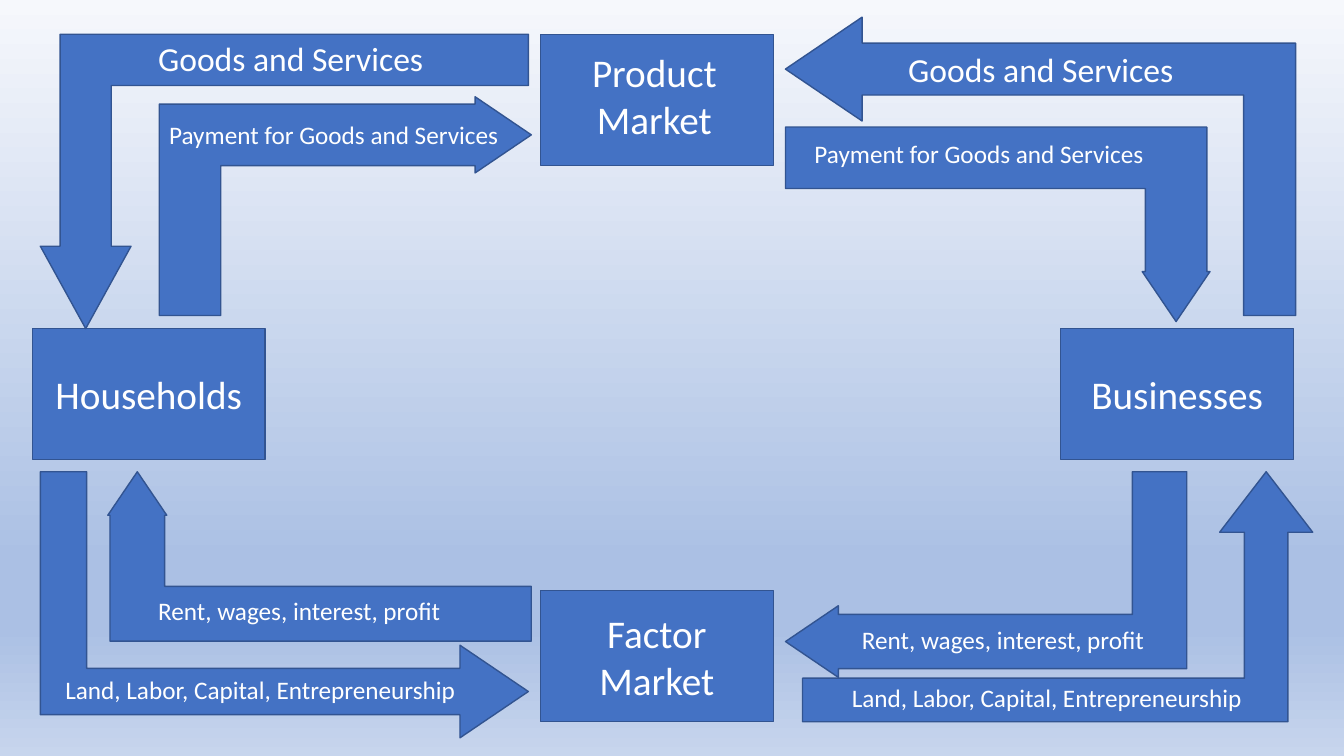
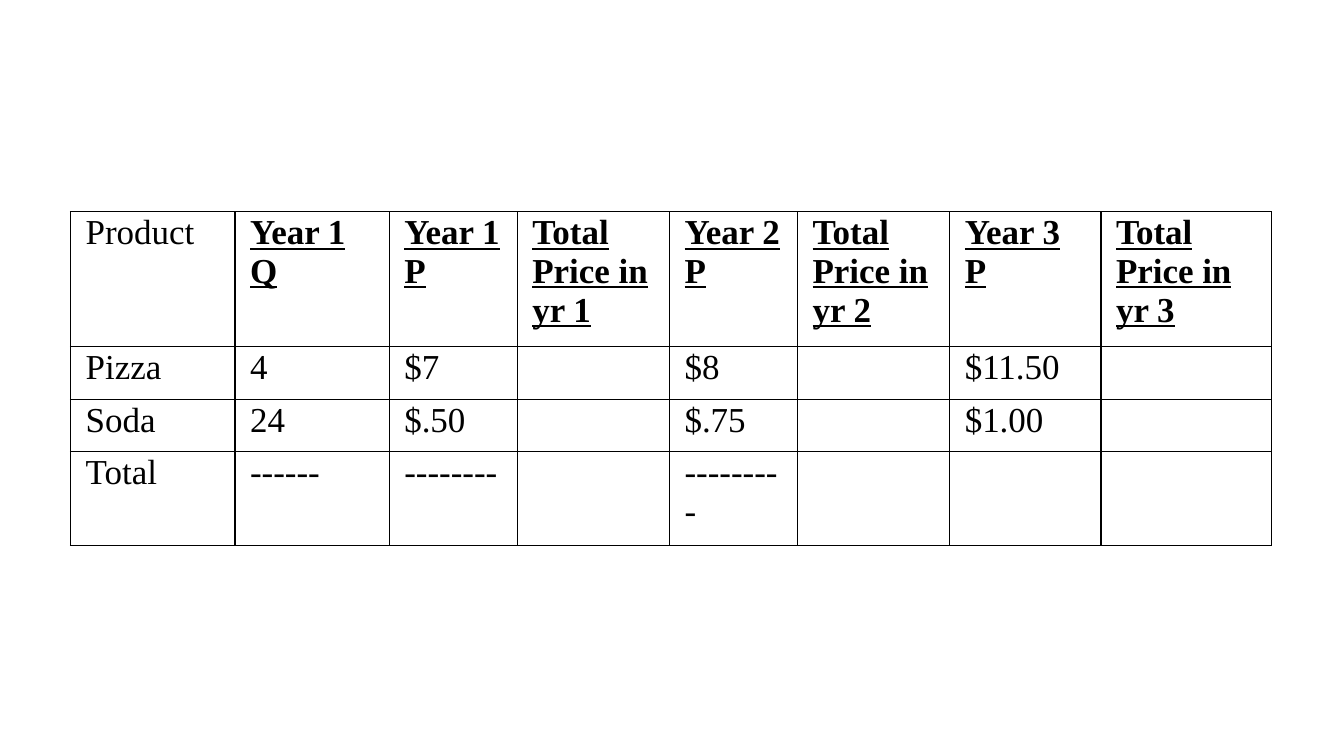
from dataclasses import dataclass
from typing import Any

from lxml.etree import SubElement
from pptx import Presentation
from pptx.dml.color import RGBColor
from pptx.enum.shapes import MSO_SHAPE as Shape
from pptx.enum.text import MSO_ANCHOR as Anchor, PP_ALIGN as Align
from pptx.oxml.ns import qn
from pptx.util import Inches, Pt

# Shared style
BLUE, OUTLINE, WHITE, BLACK = "4472C4", "325491", "FFFFFF", "000000"
BACKGROUND_STOPS = [(0, "F6F8FC"), (74, "ABC0E4"), (83, "ABC0E4"), (100, "C7D5ED")]
BOX_FONT = {"name": "Calibri", "size": Pt(28)}
TABLE_FONT = {"name": "Times New Roman", "size": Pt(25)}
HEADING_FONT = TABLE_FONT | {"bold": True, "underline": True}
CELL_FORMAT = {
    "margin_left": Inches(0.15), "margin_right": Inches(0.15),
    "margin_top": Inches(0.02), "margin_bottom": 0, "vertical_anchor": Anchor.TOP,
}
BOX_WIDTH, BOX_HEIGHT = 2.31, 1.3


@dataclass
class Box:
    left: float
    top: float
    text: str = ""


@dataclass
class FlowArrow:
    left: float
    top: float
    width: float
    height: float
    adjustments: tuple[float, float, float]
    rotation: int = 0
    flipped: bool = False


@dataclass
class Label:
    left: float
    top: float
    width: float
    height: float
    text: str
    size: int = 18
    centred: bool = False


BOXES = [
    Box(0.32, 3.26, "Households"),
    Box(10.52, 3.26, "Businesses"),
    Box(5.36, 0.34),
    Box(5.36, 5.86, "Factor Market"),
]
ARROWS = [
    # Outer loop
    FlowArrow(7.96, 4.68, 5.06, 2.48, (0.174, 0.186, 0.242)),
    FlowArrow(0.4, 0.34, 4.84, 2.92, (0.174, 0.154, 0.28), 180),
    FlowArrow(1.5, 3.58, 2.64, 4.84, (0.174, 0.174, 0.257), 90),
    FlowArrow(8.84, -0.88, 2.96, 5.06, (0.174, 0.174, 0.257), 270),
    # Inner loop
    FlowArrow(8.76, 3.71, 2.04, 3.98, (0.264, 0.174, 0.257), 270, True),
    FlowArrow(7.79, 1.26, 4.21, 1.93, (0.316, 0.174, 0.257), 180, True),
    FlowArrow(1.07, 4.68, 4.2, 1.68, (0.323, 0.174, 0.257), 0, True),
    FlowArrow(2.34, 0.2, 2.17, 3.69, (0.281, 0.174, 0.257), 90, True),
]
RESOURCES = "Land, Labor, Capital, Entrepreneurship"
INCOME = "Rent, wages, interest, profit"
PAYMENT = "Payment for Goods and Services"
GOODS = "Goods and Services"
LABELS = [
    Label(0.55, 6.64, 4.24, 0.4, RESOURCES),
    Label(8.35, 6.72, 4.24, 0.4, RESOURCES),
    Label(1.47, 5.86, 3.03, 0.4, INCOME),
    Label(8.45, 6.14, 3.03, 0.4, INCOME),
    Label(1.58, 1.13, 3.5, 0.4, PAYMENT),
    Label(7.98, 1.32, 3.5, 0.4, PAYMENT),
    Label(1.47, 0.33, 2.86, 0.5, GOODS, 24),
    Label(8.91, 0.44, 2.86, 0.5, GOODS, 24),
    Label(5.23, 0.43, 2.52, 1.04, "Product Market", 28, True),
]

COLUMN_WIDTHS = [1.63, 1.53, 1.27, 1.51, 1.27, 1.51, 1.5, 1.69]
ROW_HEIGHTS = [1.34, 0.52, 0.52, 0.93]
PRICE_ROWS = [
    ["Product", "Year 1 Q", "Year 1 P", "Total Price in yr 1", "Year 2 P",
     "Total Price in yr 2", "Year 3 P", "Total Price in yr 3"],
    ["Pizza", "4", "$7", "", "$8", "", "$11.50", ""],
    ["Soda", "24", "$.50", "", "$.75", "", "$1.00", ""],
    ["Total", "-" * 6, "-" * 8, "", "-" * 9, "", "", ""],
]


def color(value: str) -> RGBColor:
    return RGBColor.from_string(value)


def apply_format(target: Any, values: dict[str, Any]) -> None:
    for name, value in values.items():
        setattr(target, name, value)


def write_text(paragraph: Any, text: str, font: dict[str, Any], text_color: str) -> None:
    run = paragraph.add_run()
    run.text = text
    apply_format(run.font, font)
    run.font.color.rgb = color(text_color)


def set_gradient_background(slide: Any) -> None:
    fill = slide.background.fill
    fill.gradient()
    fill.gradient_angle = 270
    stop_list = next(slide.element.iter(qn("a:gsLst")))
    for stop in list(stop_list):
        stop_list.remove(stop)
    for position, value in BACKGROUND_STOPS:
        stop = SubElement(stop_list, qn("a:gs"), pos=str(position * 1000))
        SubElement(stop, qn("a:srgbClr"), val=value)


def add_blue_shape(slide: Any, kind: Shape, left: float, top: float,
                   width: float, height: float) -> Any:
    shape = slide.shapes.add_shape(
        kind, Inches(left), Inches(top), Inches(width), Inches(height))
    shape.shadow.inherit = False
    shape.fill.solid()
    shape.fill.fore_color.rgb = color(BLUE)
    shape.line.color.rgb = color(OUTLINE)
    shape.line.width = Pt(1)
    return shape


def add_box(slide: Any, box: Box) -> None:
    shape = add_blue_shape(slide, Shape.RECTANGLE, box.left, box.top, BOX_WIDTH, BOX_HEIGHT)
    if box.text:
        frame = shape.text_frame
        apply_format(frame, {"word_wrap": True, "vertical_anchor": Anchor.MIDDLE})
        frame.paragraphs[0].alignment = Align.CENTER
        write_text(frame.paragraphs[0], box.text, BOX_FONT, WHITE)


def add_arrow(slide: Any, arrow: FlowArrow) -> None:
    shape = add_blue_shape(
        slide, Shape.BENT_UP_ARROW, arrow.left, arrow.top, arrow.width, arrow.height)
    shape.rotation = arrow.rotation
    for index, value in enumerate(arrow.adjustments):
        shape.adjustments[index] = value
    if arrow.flipped:
        next(shape.element.iter(qn("a:xfrm"))).set("flipH", "1")


def add_label(slide: Any, label: Label) -> None:
    text_box = slide.shapes.add_textbox(
        Inches(label.left), Inches(label.top), Inches(label.width), Inches(label.height))
    frame = text_box.text_frame
    frame.word_wrap = label.centred
    paragraph = frame.paragraphs[0]
    paragraph.alignment = Align.CENTER if label.centred else Align.LEFT
    write_text(paragraph, label.text, BOX_FONT | {"size": Pt(label.size)}, WHITE)


def add_borders(cell: Any) -> None:
    properties = cell._tc.get_or_add_tcPr()
    for side in ("lnL", "lnR", "lnT", "lnB"):
        line = SubElement(properties, qn(f"a:{side}"), w=str(Pt(1)))
        SubElement(SubElement(line, qn("a:solidFill")), qn("a:srgbClr"), val=BLACK)


def add_price_table(slide: Any) -> None:
    table = slide.shapes.add_table(
        len(ROW_HEIGHTS), len(COLUMN_WIDTHS), Inches(0.7), Inches(2.1),
        Inches(sum(COLUMN_WIDTHS)), Inches(sum(ROW_HEIGHTS))).table
    apply_format(table, {"first_row": False, "horz_banding": False})
    for column, width in zip(table.columns, COLUMN_WIDTHS):
        column.width = Inches(width)
    for row, height in zip(table.rows, ROW_HEIGHTS):
        row.height = Inches(height)
    for row_index, texts in enumerate(PRICE_ROWS):
        for column_index, text in enumerate(texts):
            cell = table.cell(row_index, column_index)
            add_borders(cell)
            cell.fill.background()
            apply_format(cell, CELL_FORMAT)
            if text:
                is_heading = row_index == 0 and column_index > 0
                font = HEADING_FONT if is_heading else TABLE_FONT
                write_text(cell.text_frame.paragraphs[0], text, font, BLACK)


def main() -> None:
    presentation = Presentation()
    apply_format(presentation, {"slide_width": Inches(13.33), "slide_height": Inches(7.5)})
    blank_layout = presentation.slide_layouts[6]

    # Circular flow diagram
    flow_slide = presentation.slides.add_slide(blank_layout)
    set_gradient_background(flow_slide)
    for box in BOXES:
        add_box(flow_slide, box)
    for arrow in ARROWS:
        add_arrow(flow_slide, arrow)
    for label in LABELS:
        add_label(flow_slide, label)

    # Price table
    add_price_table(presentation.slides.add_slide(blank_layout))

    presentation.save("out.pptx")


if __name__ == "__main__":
    main()
